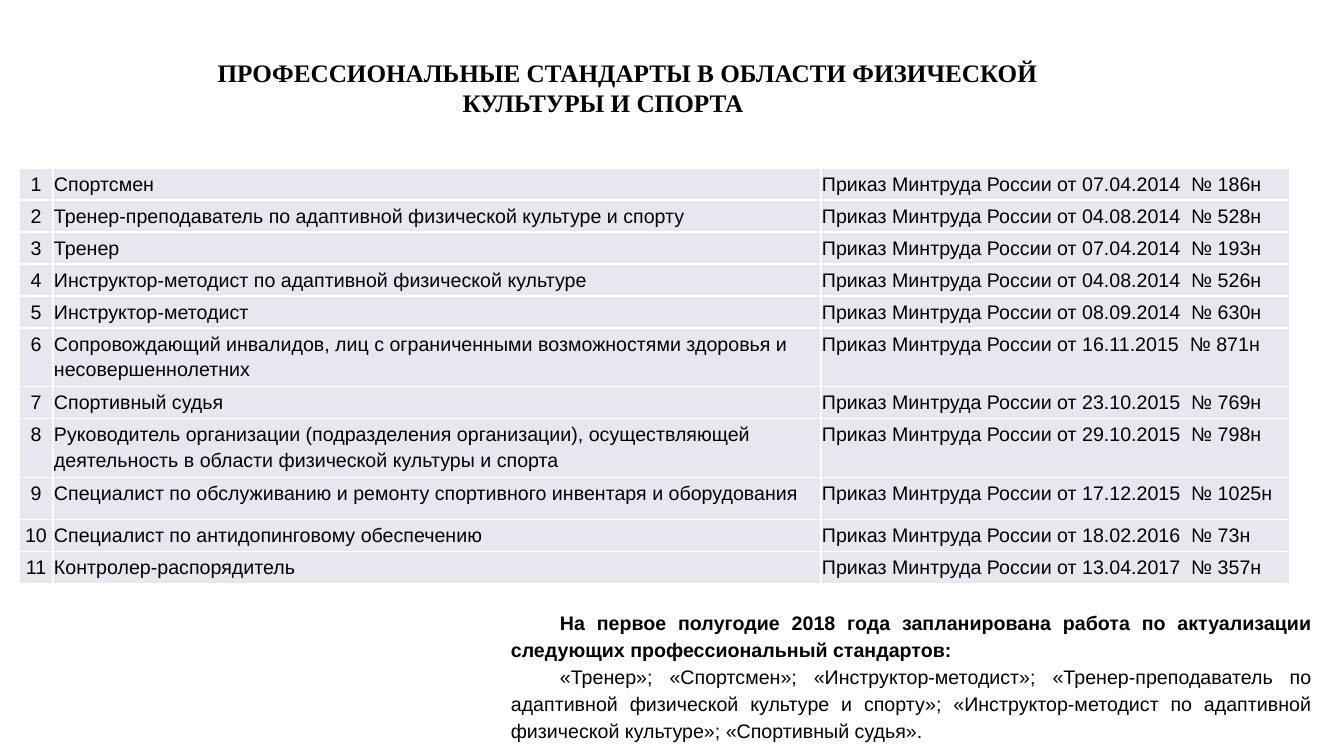
"""Build a slide listing professional standards in physical culture and sport."""
from lxml import etree
from pptx import Presentation
from pptx import util as u
from pptx.dml.color import RGBColor
from pptx.enum import text
from pptx.oxml.ns import qn

TITLE = "ПРОФЕССИОНАЛЬНЫЕ СТАНДАРТЫ В ОБЛАСТИ ФИЗИЧЕСКОЙ КУЛЬТУРЫ И СПОРТА"
STANDARDS = [
    ("Спортсмен", "07.04.2014", "186н"),
    ("Тренер-преподаватель по адаптивной физической культуре и спорту", "04.08.2014", "528н"),
    ("Тренер", "07.04.2014", "193н"),
    ("Инструктор-методист по адаптивной физической культуре", "04.08.2014", "526н"),
    ("Инструктор-методист", "08.09.2014", "630н"),
    ("Сопровождающий инвалидов, лиц с ограниченными возможностями здоровья и "
     "несовершеннолетних", "16.11.2015", "871н"),
    ("Спортивный судья", "23.10.2015", "769н"),
    ("Руководитель организации (подразделения организации), осуществляющей "
     "деятельность в области физической культуры и спорта", "29.10.2015", "798н"),
    ("Специалист по обслуживанию и ремонту спортивного инвентаря и оборудования",
     "17.12.2015", "1025н"),
    ("Специалист по антидопинговому обеспечению", "18.02.2016", "73н"),
    ("Контролер-распорядитель", "13.04.2017", "357н"),
]
PLAN_HEADING = ("На первое полугодие 2018 года запланирована работа по актуализации "
                "следующих профессиональный стандартов:")
PLAN_LIST = ("«Тренер»; «Спортсмен»; «Инструктор-методист»; «Тренер-преподаватель по "
             "адаптивной физической культуре и спорту»; «Инструктор-методист по "
             "адаптивной физической культуре»; «Спортивный судья».")

COLUMN_WIDTHS = [34, 768, 469]
ROW_HEIGHT = 32
TALL_ROWS = {6: 59, 8: 59, 9: 42}
INDENT = 49
BLACK, WHITE, CELL_FILL = "000000", "FFFFFF", "E7E8EF"
ALIGN = text.PP_ALIGN


def px(length):
    return u.Emu(round(length * 914400 / 100.8))


def color(value):
    return RGBColor.from_string(value)


def style(paragraph, align, size=14, font="Arial", bold=False, spacing=1.15, indent=0):
    paragraph.alignment = align
    paragraph.line_spacing = spacing
    if indent:
        properties = paragraph._p.get_or_add_pPr()
        properties.set("marL", "0")
        properties.set("indent", str(px(indent)))
    for run in paragraph.runs:
        run.font.size = u.Pt(size)
        run.font.name = font
        run.font.bold = bold
        run.font.color.rgb = color(BLACK)


def add_text(slide, box, lines):
    frame = slide.shapes.add_textbox(*map(px, box)).text_frame
    frame.word_wrap = True
    frame.text = "\n".join(line for line, _ in lines)
    for paragraph, (_, options) in zip(frame.paragraphs, lines):
        style(paragraph, indent=INDENT, **options)


def add_borders(cell):
    properties = cell._tc.get_or_add_tcPr()
    for position, side in enumerate(("lnL", "lnR", "lnT", "lnB")):
        line = etree.Element(qn("a:" + side), w=str(u.Pt(1)))
        fill = etree.SubElement(line, qn("a:solidFill"))
        etree.SubElement(fill, qn("a:srgbClr"), val=WHITE)
        properties.insert(position, line)


def fill_cell(cell, content, align):
    cell.margin_left = cell.margin_right = px(1)
    cell.margin_top = cell.margin_bottom = px(2)
    cell.fill.solid()
    cell.fill.fore_color.rgb = color(CELL_FILL)
    add_borders(cell)
    cell.text_frame.text = content
    style(cell.text_frame.paragraphs[0], align)


def add_standards(slide):
    heights = [TALL_ROWS.get(number, ROW_HEIGHT) for number in range(1, len(STANDARDS) + 1)]
    table = slide.shapes.add_table(
        len(heights), len(COLUMN_WIDTHS), px(19), px(168),
        px(sum(COLUMN_WIDTHS)), px(sum(heights))).table
    table.first_row = table.horz_banding = False
    for column, width in zip(table.columns, COLUMN_WIDTHS):
        column.width = px(width)
    for index, (name, date, order) in enumerate(STANDARDS):
        table.rows[index].height = px(heights[index])
        contents = (str(index + 1), name, f"Приказ Минтруда России от {date}  № {order}")
        aligns = (ALIGN.CENTER, ALIGN.LEFT, ALIGN.LEFT)
        for column, (content, align) in enumerate(zip(contents, aligns)):
            fill_cell(table.cell(index, column), content, align)


def main():
    presentation = Presentation()
    presentation.slide_width, presentation.slide_height = px(1344), px(756)
    slide = presentation.slides.add_slide(presentation.slide_layouts[6])
    add_standards(slide)
    add_text(slide, (501, 602, 821, 144), [
        (PLAN_HEADING, {"align": ALIGN.JUSTIFY, "bold": True}),
        (PLAN_LIST, {"align": ALIGN.JUSTIFY}),
    ])
    add_text(slide, (141, 52, 924, 72), [
        (TITLE, {"align": ALIGN.CENTER, "size": 18, "font": "Times New Roman",
                 "bold": True, "spacing": 1.0}),
    ])
    presentation.save("out.pptx")


if __name__ == "__main__":
    main()
